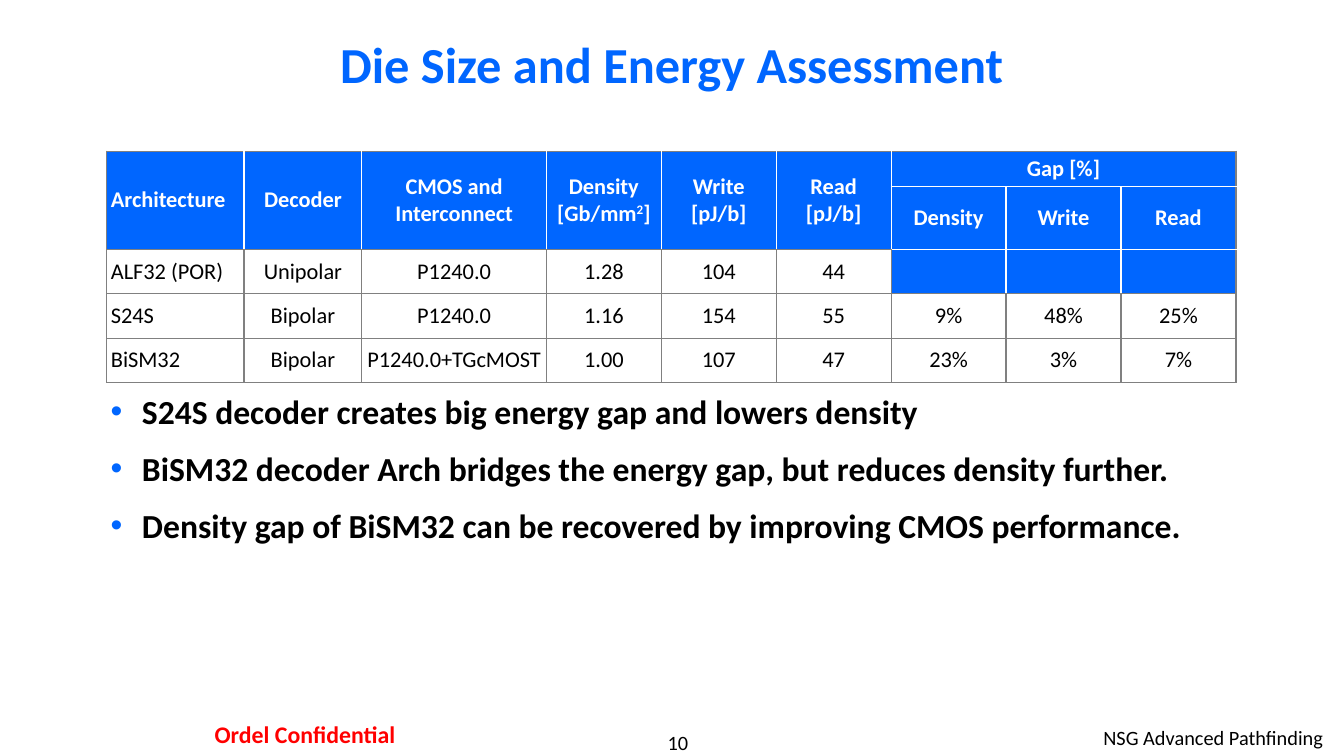
"""Build the die size and energy slide."""
from dataclasses import dataclass

from lxml import etree
from pptx import Presentation
from pptx.dml.color import RGBColor
from pptx.enum.text import MSO_ANCHOR, PP_ALIGN
from pptx.oxml.ns import qn
from pptx.util import Inches, Pt

LEFT, CENTER, RIGHT = PP_ALIGN.LEFT, PP_ALIGN.CENTER, PP_ALIGN.RIGHT
TOP, MIDDLE = MSO_ANCHOR.TOP, MSO_ANCHOR.MIDDLE


@dataclass(frozen=True)
class Theme:
    font: str = "Calibri"
    blue: str = "0066FF"
    white: str = "FFFFFF"
    black: str = "000000"
    gray: str = "808080"
    red: str = "FF0000"
    title: float = 36
    body: float = 24
    cell: float = 16
    mark: float = 17
    foot: float = 14.5


THEME = Theme()


@dataclass(frozen=True)
class Box:
    lines: tuple[str, ...]
    left: float
    top: float
    width: float
    height: float
    size: float
    color: str = THEME.black
    bold: bool = False
    align: PP_ALIGN = CENTER
    anchor: MSO_ANCHOR = TOP
    inset: tuple[float, float] = (0.1, 0.05)
    bullet: bool = False


@dataclass(frozen=True)
class Head:
    text: str
    row: int
    col: int
    high: int = 1
    wide: int = 1


BOXES = (
    Box(("10",), 5.56, 7.24, 2.33, 0.24, THEME.foot, inset=(0, 0)),
    Box(("NSG Advanced Pathfinding",), 8.83, 7.15, 4.39, 0.35, THEME.foot, align=RIGHT),
    Box(("Ordel Confidential",), 1.55, 7.08, 2.95, 0.41, THEME.mark, THEME.red, True,
        inset=(0.12, 0.06)),
    Box(("Die Size and Energy Assessment",), 1, 0.17, 11.33, 0.92, THEME.title,
        THEME.blue, True, anchor=MIDDLE),
    Box(("S24S decoder creates big energy gap and lowers density",
         "BiSM32 decoder Arch bridges the energy gap, but reduces density further.",
         "Density gap of BiSM32 can be recovered by improving CMOS performance."),
        1, 3.83, 11.33, 2.83, THEME.body, bold=True, align=LEFT, bullet=True),
)

TALL = ("Architecture", "Decoder", "CMOS and Interconnect", "Density\n[Gb/mm^2^]",
        "Write\n[pJ/b]", "Read\n[pJ/b]")
GAPS = ("Density", "Write", "Read")
GAP_COL = len(TALL)
HEADS = (
    *(Head(text, 0, col, high=2) for col, text in enumerate(TALL)),
    Head("Gap [%]", 0, GAP_COL, wide=len(GAPS)),
    *(Head(text, 1, GAP_COL + step) for step, text in enumerate(GAPS)),
)
DATA = (
    ("ALF32 (POR)", "Unipolar", "P1240.0", "1.28", "104", "44", "", "", ""),
    ("S24S", "Bipolar", "P1240.0", "1.16", "154", "55", "9%", "48%", "25%"),
    ("BiSM32", "Bipolar", "P1240.0+TGcMOST", "1.00", "107", "47", "23%", "3%", "7%"),
)
WIDTHS = (1.36, 1.17, 1.83) + (1.14,) * 6
HEIGHTS = (0.35, 0.61) + (0.44,) * 3


def add_run(para, text: str, size: float, color: str, bold: bool):
    run = para.add_run()
    run.text = text
    font = run.font
    font.name, font.size, font.bold = THEME.font, Pt(size), bold
    font.color.rgb = RGBColor.from_string(color)
    return run


def add_lines(frame, lines, size: float, color: str, bold: bool, align) -> list:
    for index, line in enumerate(lines):
        para = frame.add_paragraph() if index else frame.paragraphs[0]
        para.alignment = align
        for part, text in enumerate(line.split("^")):
            run = add_run(para, text, size, color, bold)
            if part % 2:
                run._r.get_or_add_rPr().set("baseline", "30000")
    return list(frame.paragraphs)


def add_bullet(para) -> None:
    props = para._p.get_or_add_pPr()
    props.set("marL", str(Inches(0.31)))
    props.set("indent", str(-Inches(0.31)))
    tint = etree.SubElement(props, qn("a:buClr"))
    etree.SubElement(tint, qn("a:srgbClr"), val=THEME.blue)
    etree.SubElement(props, qn("a:buFont"), typeface="Arial")
    etree.SubElement(props, qn("a:buChar"), char="•")


def add_box(slide, box: Box) -> None:
    shape = slide.shapes.add_textbox(*map(Inches, (box.left, box.top, box.width, box.height)))
    frame = shape.text_frame
    frame.word_wrap, frame.vertical_anchor = True, box.anchor
    frame.margin_left = frame.margin_right = Inches(box.inset[0])
    frame.margin_top = frame.margin_bottom = Inches(box.inset[1])
    paras = add_lines(frame, box.lines, box.size, box.color, box.bold, box.align)
    for index, para in enumerate(paras):
        if box.bullet:
            add_bullet(para)
        if index:
            para.space_before = Pt(12)


def is_blue(row: int, col: int) -> bool:
    if not (0 <= row < len(HEIGHTS) and 0 <= col < len(WIDTHS)):
        return False
    return row < 2 or (row == 2 and col >= GAP_COL)


def style_cell(cell, spot: Head) -> None:
    row, col = spot.row, spot.col
    blue = is_blue(row, col)
    sides = {"L": (row, col - 1), "R": (row, col + spot.wide),
             "T": (row - 1, col), "B": (row + spot.high, col)}
    props = cell._tc.get_or_add_tcPr()
    for side, near in sides.items():
        line = etree.SubElement(props, qn(f"a:ln{side}"), w=str(Pt(1)))
        fill = etree.SubElement(line, qn("a:solidFill"))
        color = THEME.white if blue and is_blue(*near) else THEME.gray
        etree.SubElement(fill, qn("a:srgbClr"), val=color)
    if blue:
        cell.fill.solid()
        cell.fill.fore_color.rgb = RGBColor.from_string(THEME.blue)
    else:
        cell.fill.background()
    cell.margin_left = cell.margin_right = Inches(0.04)
    cell.margin_top = cell.margin_bottom = Inches(0.04)
    cell.vertical_anchor = MIDDLE


def add_grid(slide) -> None:
    size = (sum(WIDTHS), sum(HEIGHTS))
    frame = slide.shapes.add_table(len(HEIGHTS), len(WIDTHS), *map(Inches, (1.06, 1.5, *size)))
    table = frame.table
    table.first_row = table.horz_banding = False
    for column, width in zip(table.columns, WIDTHS):
        column.width = Inches(width)
    for line, height in zip(table.rows, HEIGHTS):
        line.height = Inches(height)
    spots = HEADS + tuple(Head(text, row, col) for row, texts in enumerate(DATA, 2)
                          for col, text in enumerate(texts))
    for spot in spots:
        last = (spot.row + spot.high - 1, spot.col + spot.wide - 1)
        for row in range(spot.row, last[0] + 1):
            for col in range(spot.col, last[1] + 1):
                style_cell(table.cell(row, col), spot)
        cell = table.cell(spot.row, spot.col)
        if spot.high * spot.wide > 1:
            cell.merge(table.cell(*last))
        if spot.text:
            head = spot.row < 2
            add_lines(cell.text_frame, spot.text.split("\n"), THEME.cell,
                      THEME.white if head else THEME.black, head,
                      CENTER if spot.col else LEFT)


def main() -> None:
    deck = Presentation()
    deck.slide_width, deck.slide_height = Inches(13.33), Inches(7.5)
    slide = deck.slides.add_slide(deck.slide_layouts[6])
    add_grid(slide)
    for box in BOXES:
        add_box(slide, box)
    deck.save("out.pptx")


if __name__ == "__main__":
    main()
